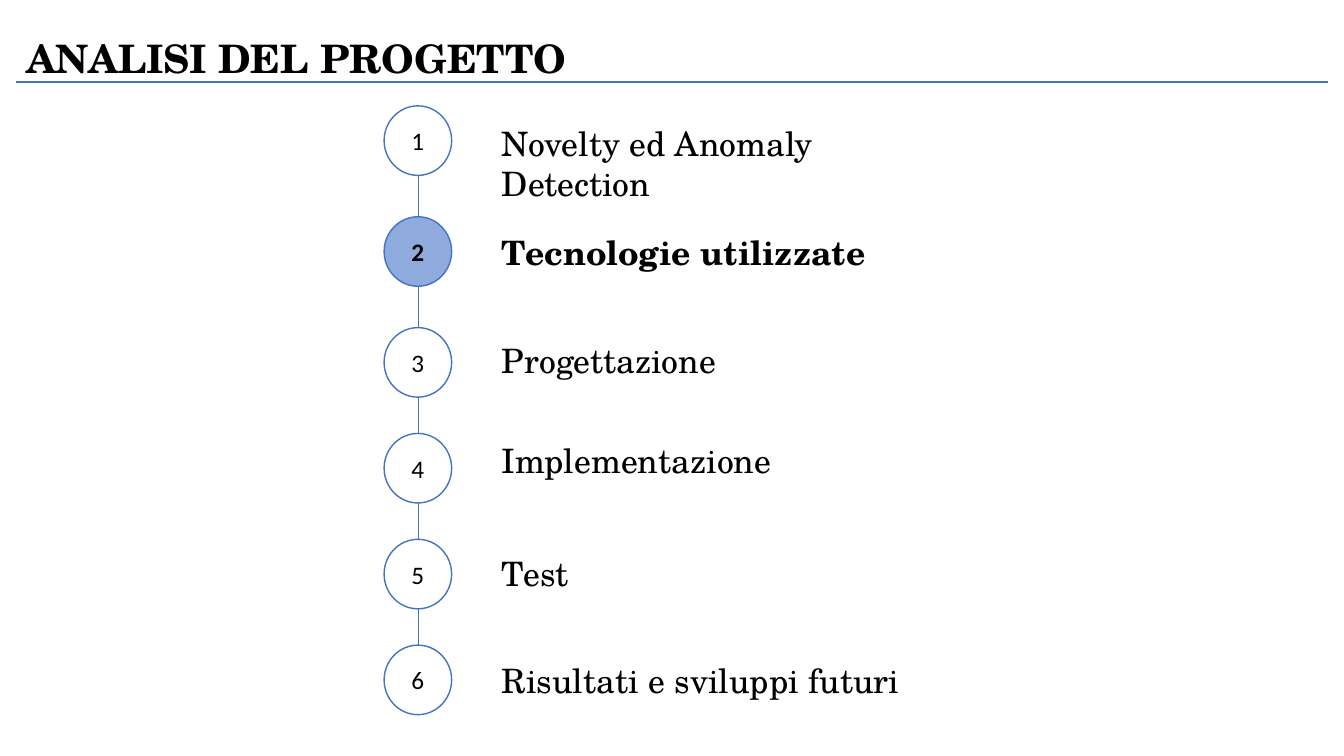
from pptx import Presentation
from pptx.dml.color import RGBColor
from pptx.enum.shapes import MSO_CONNECTOR, MSO_SHAPE
from pptx.enum.text import MSO_ANCHOR, MSO_AUTO_SIZE, PP_ALIGN
from pptx.oxml import parse_xml
from pptx.oxml.ns import nsdecls
from pptx.util import Inches, Pt

COLORS = {"text": "000000", "line": "4472C4", "current": "8FAADC", "plain": "FFFFFF"}
SERIF, SANS = "TeX Gyre Schola", "Calibri"


def write(frame, text, font=SERIF, size=24, bold=False, align=PP_ALIGN.LEFT,
          anchor=MSO_ANCHOR.TOP, fit=MSO_AUTO_SIZE.NONE):
    frame.word_wrap = True
    frame.auto_size = fit
    frame.vertical_anchor = anchor
    para = frame.paragraphs[0]
    para.alignment = align
    span = para.add_run()
    span.text = text
    span.font.name, span.font.size, span.font.bold = font, Pt(size), bold
    span.font.color.rgb = RGBColor.from_string(COLORS["text"])


def draw_line(page, x1, y1, x2, y2, width):
    line = page.shapes.add_connector(
        MSO_CONNECTOR.STRAIGHT, Inches(x1), Inches(y1), Inches(x2), Inches(y2))
    line.line.color.rgb = RGBColor.from_string(COLORS["line"])
    line.line.width = Pt(width)
    line._element.spPr.append(parse_xml(f"<a:effectLst {nsdecls('a')}/>"))


deck = Presentation()
deck.slide_width, deck.slide_height = Inches(13.33), Inches(7.5)
page = deck.slides.add_slide(deck.slide_layouts[5])

# Title and its rule
MARGIN = 0.16
title = page.shapes.title
title.left, title.top = Inches(MARGIN), Inches(0.29)
title.width, title.height = Inches(6.5), Inches(1.04)
write(title.text_frame, "ANALISI DEL PROGETTO", size=28, bold=True)
draw_line(page, MARGIN, 0.81, 13.33 - MARGIN, 0.81, 1.5)

# Agenda: circle top, label top, label
STEPS = [
    (1.05, 1.17, "Novelty ed Anomaly Detection"),
    (2.15, 2.25, "Tecnologie utilizzate"),
    (3.25, 3.32, "Progettazione"),
    (4.30, 4.32, "Implementazione"),
    (5.35, 5.44, "Test"),
    (6.40, 6.50, "Risultati e sviluppi futuri"),
]
CURRENT = 2
CIRCLE_LEFT, CIRCLE_WIDTH, CIRCLE_HEIGHT = 3.81, 0.67, 0.69
AXIS = CIRCLE_LEFT + CIRCLE_WIDTH / 2

for number, (top, label_top, label) in enumerate(STEPS, start=1):
    is_current = number == CURRENT

    # Numbered circle
    circle = page.shapes.add_shape(
        MSO_SHAPE.FLOWCHART_CONNECTOR, Inches(CIRCLE_LEFT), Inches(top),
        Inches(CIRCLE_WIDTH), Inches(CIRCLE_HEIGHT))
    circle.shadow.inherit = False
    circle.fill.solid()
    circle.fill.fore_color.rgb = RGBColor.from_string(
        COLORS["current" if is_current else "plain"])
    circle.line.color.rgb = RGBColor.from_string(COLORS["line"])
    circle.line.width = Pt(1)
    write(circle.text_frame, str(number), font=SANS, size=18, bold=is_current,
          align=PP_ALIGN.CENTER, anchor=MSO_ANCHOR.MIDDLE)

    # Link to the next circle
    if number < len(STEPS):
        draw_line(page, AXIS, top + CIRCLE_HEIGHT, AXIS, STEPS[number][0], 0.5)

    # Label
    box = page.shapes.add_textbox(
        Inches(4.88), Inches(label_top), Inches(4.68), Inches(0.5))
    write(box.text_frame, label, bold=is_current, fit=MSO_AUTO_SIZE.SHAPE_TO_FIT_TEXT)

deck.save("out.pptx")
